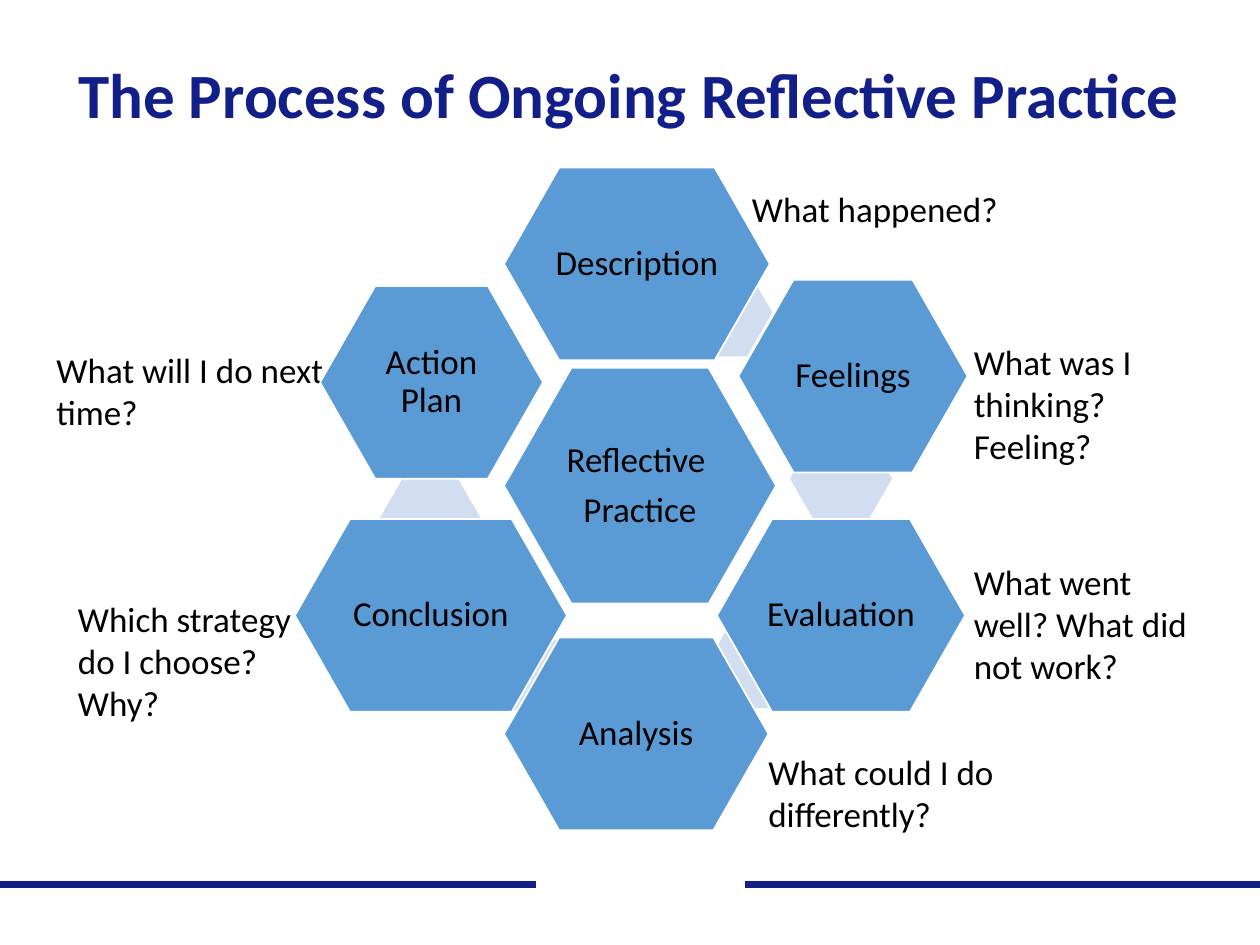
from lxml.etree import SubElement
from pptx import Presentation
from pptx.dml.color import RGBColor
from pptx.enum.shapes import MSO_CONNECTOR, MSO_SHAPE
from pptx.enum.text import MSO_ANCHOR, MSO_AUTO_SIZE, PP_ALIGN
from pptx.oxml.ns import qn
from pptx.util import Inches, Pt

NAVY = RGBColor(0x12, 0x1F, 0x88)
BLUE = RGBColor(0x5B, 0x9B, 0xD5)
PALE = RGBColor(0xD2, 0xDE, 0xEF)
WHITE = RGBColor(0xFF, 0xFF, 0xFF)
BLACK = RGBColor(0, 0, 0)


class Deck:
    """Holds the text style and the current slide."""

    face = "Calibri"
    size = 20

    def __init__(self, slide):
        self.slide = slide
        self.shapes = slide.shapes

    def text(self, para, words, size=None, color=BLACK, bold=False):
        run = para.add_run()
        run.text = words
        font = run.font
        font.name = self.face
        font.size = Pt(size or self.size)
        font.bold = bold
        font.color.rgb = color

    def title(self, words, *box):
        shape = self.shapes.title
        shape.left, shape.top, shape.width, shape.height = map(Inches, box)
        frame = shape.text_frame
        frame.word_wrap = True
        frame.auto_size = MSO_AUTO_SIZE.NONE
        frame.vertical_anchor = MSO_ANCHOR.MIDDLE
        para = frame.paragraphs[0]
        para.alignment = PP_ALIGN.LEFT
        para.line_spacing = 0.9
        self.text(para, words, 36, NAVY, True)

    def rule(self, start, end, y, color):
        line = self.shapes.add_connector(
            MSO_CONNECTOR.STRAIGHT, Inches(start), Inches(y), Inches(end), Inches(y))
        line.line.color.rgb = color
        line.line.width = Pt(4.5)
        SubElement(line._element.spPr, qn("a:effectLst"))

    def note(self, words, *box):
        frame = self.shapes.add_textbox(*map(Inches, box)).text_frame
        frame.word_wrap = True
        frame.auto_size = MSO_AUTO_SIZE.SHAPE_TO_FIT_TEXT
        self.text(frame.paragraphs[0], words)

    def hexagon(self, box, fill, adjust):
        shape = self.shapes.add_shape(MSO_SHAPE.HEXAGON, *map(Inches, box))
        shape.adjustments[0] = adjust
        shape.shadow.inherit = False
        shape.fill.solid()
        shape.fill.fore_color.rgb = fill
        return shape

    def link(self, left, top):
        self.hexagon((left, top, 0.81, 0.7), PALE, 0.289).line.fill.background()

    def step(self, lines, *box):
        shape = self.hexagon(box, BLUE, 0.286)
        shape.line.color.rgb = WHITE
        shape.line.width = Pt(1)
        frame = shape.text_frame
        frame.word_wrap = True
        frame.vertical_anchor = MSO_ANCHOR.MIDDLE
        frame.margin_left = frame.margin_right = Inches(0.03)
        frame.margin_top = frame.margin_bottom = Inches(0.03)
        for i, words in enumerate(lines):
            para = frame.add_paragraph() if i else frame.paragraphs[0]
            para.alignment = PP_ALIGN.CENTER
            para.line_spacing = 0.9
            para.space_after = Pt(7)
            self.text(para, words)


def main():
    prs = Presentation()
    prs.slide_width, prs.slide_height = Inches(10), Inches(7.5)
    deck = Deck(prs.slides.add_slide(prs.slide_layouts[5]))

    # Footer rule with a gap, and the title
    deck.rule(0, 10, 7.02, NAVY)
    deck.rule(4.25, 5.91, 7.02, WHITE)
    deck.title("The Process of Ongoing Reflective Practice", 0.52, 0.4, 9.13, 0.75)

    # Questions beside the steps
    notes = [
        ("What happened?", 5.87, 1.44, 2.53, 0.44),
        ("What was I thinking? Feeling?", 7.63, 2.65, 1.68, 1.11),
        ("What went well? What did not work?", 7.63, 4.4, 2.02, 1.11),
        ("What could I do differently?", 6, 5.91, 2.17, 0.77),
        ("Which strategy do I choose? Why?", 0.52, 4.69, 2.01, 1.11),
        ("What will I do next time?", 0.35, 2.72, 2.36, 0.77),
    ]
    for note in notes:
        deck.note(*note)

    # Centre, then the ring: each step lies over the link before it
    deck.step(["Reflective ", "Practice"], 4, 2.92, 2.16, 1.87)
    ring = [
        ("Description", 4, 1.33, 2.11, (5.32, 2.13)),
        ("Feelings", 5.86, 2.22, 1.82, (6.27, 3.45)),
        ("Evaluation", 5.69, 4.12, 1.97, (5.61, 4.92)),
        ("Analysis", 4, 5.06, 2.1, (3.97, 5.08)),
        ("Conclusion", 2.34, 4.12, 2.16, (3.01, 3.77)),
        ("Action Plan", 2.54, 2.27, 1.77, None),
    ]
    for words, left, top, width, link in ring:
        if link:
            deck.link(*link)
        deck.step([words], left, top, width, 1.53)

    prs.save("out.pptx")


if __name__ == "__main__":
    main()
